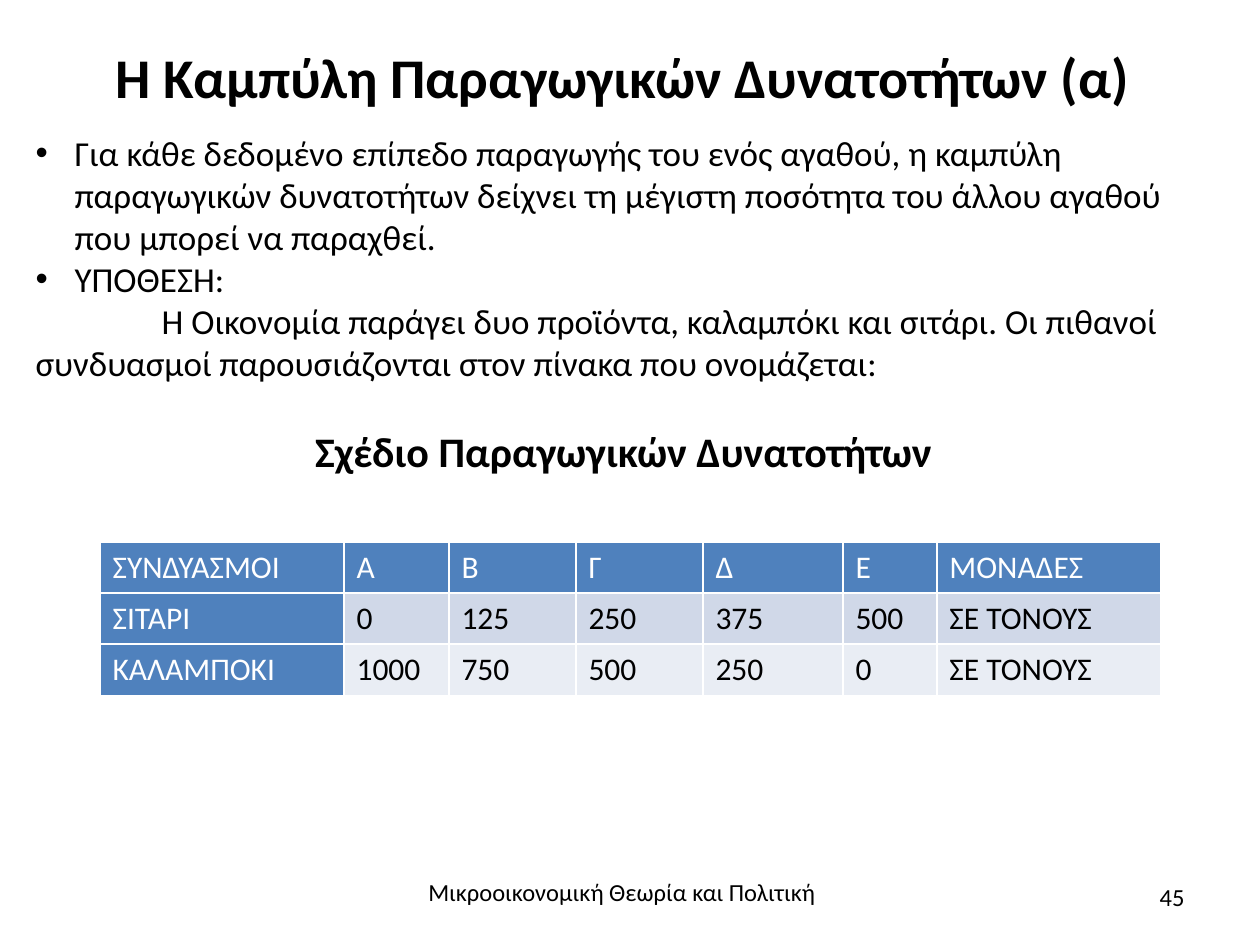
from pptx import Presentation
from pptx.dml.color import RGBColor
from pptx.enum.text import MSO_ANCHOR, MSO_AUTO_SIZE, PP_ALIGN
from pptx.oxml.ns import qn
from pptx.util import Pt
from lxml import etree

LEFT, MID, RIGHT = PP_ALIGN.LEFT, PP_ALIGN.CENTER, PP_ALIGN.RIGHT
TOP, CENTRE = MSO_ANCHOR.TOP, MSO_ANCHOR.MIDDLE
FIXED = MSO_AUTO_SIZE.NONE
PX = 914400 // 126
BLACK, WHITE, BLUE = "000000", "FFFFFF", "4F81BD"
BANDS = ["D0D8E8", "E9EDF4"]

TITLE = "Η Καμπύλη Παραγωγικών Δυνατοτήτων (α)"
# text, left margin px, first-line indent px, bullet, format
BODY = [
    ("Για κάθε δεδομένο επίπεδο παραγωγής του ενός αγαθού, η καμπύλη "
     "παραγωγικών δυνατοτήτων δείχνει τη μέγιστη ποσότητα του άλλου αγαθού "
     "που μπορεί να παραχθεί.", 39, -39, "•", {"size": 20}),
    ("ΥΠΟΘΕΣΗ:", 39, -39, "•", {"size": 20}),
    ("Η Οικονομία παράγει δυο προϊόντα, καλαμπόκι και σιτάρι. Οι πιθανοί "
     "συνδυασμοί παρουσιάζονται στον πίνακα που ονομάζεται:",
     0, 126, None, {"size": 20}),
    ("Σχέδιο Παραγωγικών Δυνατοτήτων", 0, 0, None,
     {"size": 24, "bold": True, "align": MID, "before": 24}),
]
ROWS = [
    ["ΣΥΝΔΥΑΣΜΟΙ", "Α", "Β", "Γ", "Δ", "Ε", "ΜΟΝΑΔΕΣ"],
    ["ΣΙΤΑΡΙ", "0", "125", "250", "375", "500", "ΣΕ ΤΟΝΟΥΣ"],
    ["ΚΑΛΑΜΠΟΚΙ", "1000", "750", "500", "250", "0", "ΣΕ ΤΟΝΟΥΣ"],
]
WIDTHS = [244, 105, 127, 127, 140, 94, 224]
ROW_H = 51
NOTES = [
    ("Μικροοικονομική Θεωρία και Πολιτική", (329, 871, 586, 69), MID),
    ("45", (903, 876, 294, 50), RIGHT),
]


def color(code):
    return RGBColor.from_string(code)


def write(para, text, size, ink=BLACK, bold=False, align=LEFT, before=0):
    para.text = text
    para.alignment = align
    para.space_before = Pt(before)
    look = {"name": "Calibri", "size": Pt(size), "bold": bold}
    for key, value in look.items():
        setattr(para.font, key, value)
    para.font.color.rgb = color(ink)


def indent(para, margin, first, mark):
    props = para._p.get_or_add_pPr()
    props.set("marL", str(margin * PX))
    props.set("indent", str(first * PX))
    if mark:
        font = etree.SubElement(props, qn("a:buFont"))
        font.set("typeface", "Arial")
        etree.SubElement(props, qn("a:buChar")).set("char", mark)
    else:
        etree.SubElement(props, qn("a:buNone"))


def place(shape, box, anchor):
    shape.left, shape.top, shape.width, shape.height = [n * PX for n in box]
    frame = shape.text_frame
    look = {"word_wrap": True, "auto_size": FIXED, "vertical_anchor": anchor}
    for key, value in look.items():
        setattr(frame, key, value)
    return frame


deck = Presentation()
deck.slide_width, deck.slide_height = 1260 * PX, 945 * PX
slide = deck.slides.add_slide(deck.slide_layouts[1])
title, body = slide.placeholders

frame = place(title, (87, 6, 1071, 141), CENTRE)
write(frame.paragraphs[0], TITLE, 32, bold=True, align=MID)

frame = place(body, (23, 125, 1201, 360), TOP)
for i, (text, margin, first, mark, look) in enumerate(BODY):
    para = frame.add_paragraph() if i else frame.paragraphs[0]
    indent(para, margin, first, mark)
    write(para, text, **look)

grid = slide.shapes.add_table(
    len(ROWS), len(WIDTHS), 100 * PX, 542 * PX,
    sum(WIDTHS) * PX, len(ROWS) * ROW_H * PX).table
grid.first_col = True
for col, width in zip(grid.columns, WIDTHS):
    col.width = width * PX
for r, row in enumerate(ROWS):
    for c, text in enumerate(row):
        cell = grid.cell(r, c)
        head = r == 0 or c == 0
        cell.fill.solid()
        cell.fill.fore_color.rgb = color(BLUE if head else BANDS[r - 1])
        write(cell.text_frame.paragraphs[0], text, 18,
              WHITE if head else BLACK)

for text, box, align in NOTES:
    frame = place(slide.shapes.add_textbox(0, 0, 0, 0), box, TOP)
    write(frame.paragraphs[0], text, 14, align=align)

deck.save("out.pptx")
